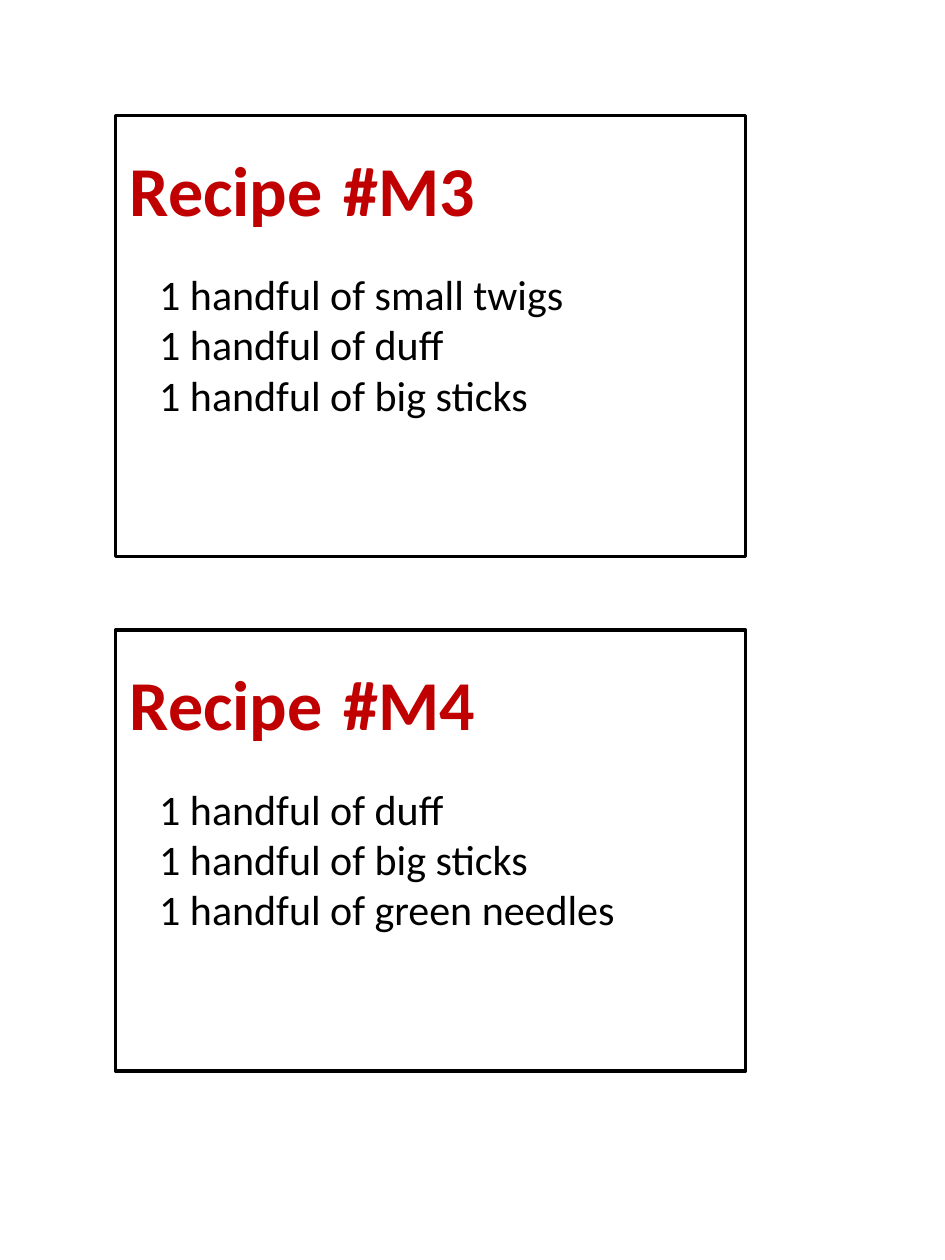
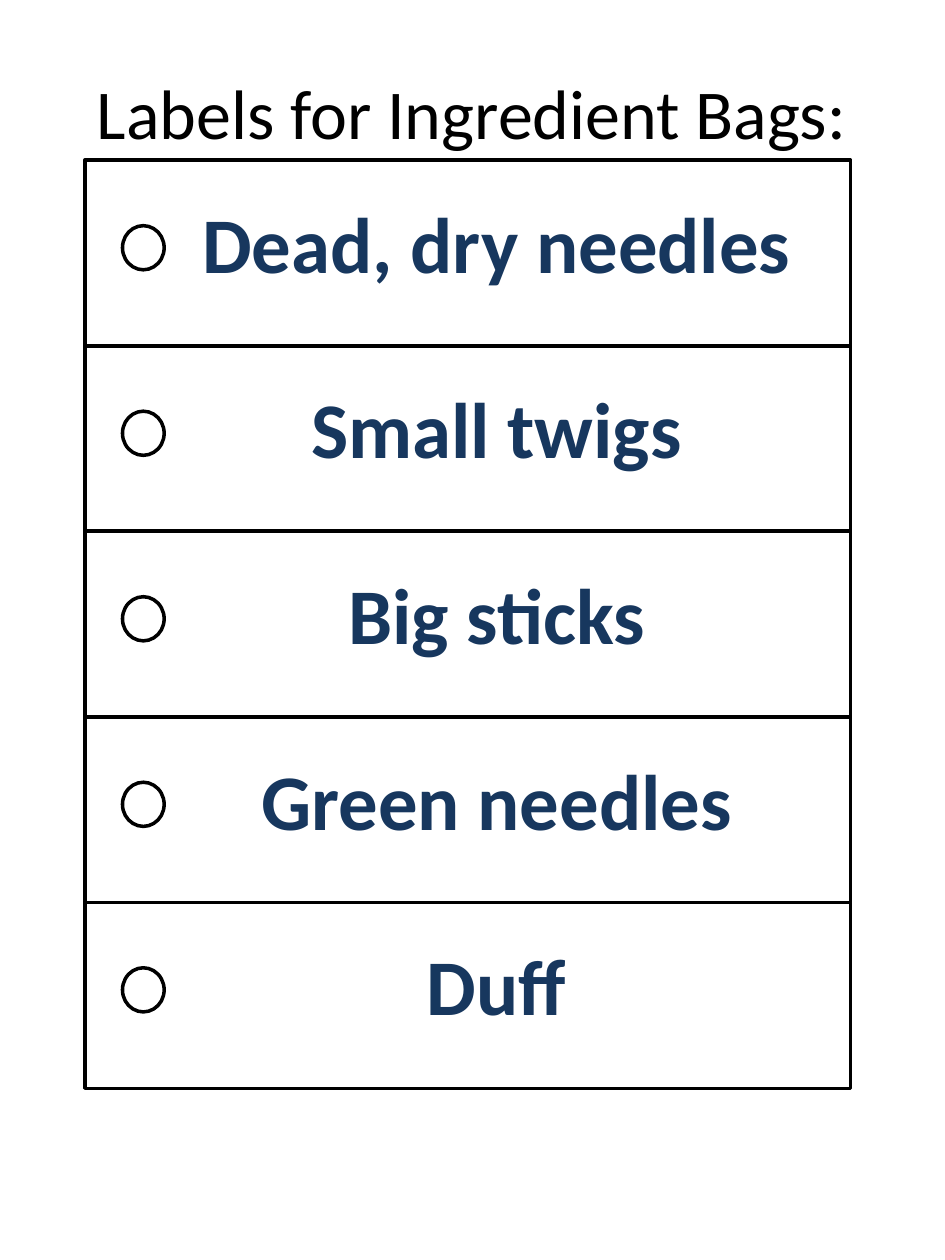
import pptx
import pptx.dml.color
import pptx.enum.shapes
import pptx.enum.text
import pptx.util

Cm = pptx.util.Cm
Pt = pptx.util.Pt
ALIGN = pptx.enum.text.PP_ALIGN
ANCHOR = pptx.enum.text.MSO_ANCHOR
SHAPE = pptx.enum.shapes.MSO_SHAPE

COLOURS = {"ink": "000000", "recipe": "C00000", "label": "17375E"}
TITLE_ONLY, BLANK = 5, 6

RECIPES = [
    ("#M3", ["1 handful of small twigs", "1 handful of duff", "1 handful of big sticks"]),
    ("#M4", ["1 handful of duff", "1 handful of big sticks", "1 handful of green needles"]),
]
BAG_LABELS = ["Dead, dry needles", "Small twigs", "Big sticks", "Green needles", "Duff"]


class CardSheet:
    """Holds the shared style and the slide being filled."""

    styles = {
        "title": {"size": Pt(40), "bold": False, "colour": "ink"},
        "recipe": {"size": Pt(40), "bold": True, "colour": "recipe"},
        "recipe gap": {"size": Pt(54), "bold": True, "colour": "recipe"},
        "ingredient": {"size": Pt(24), "bold": False, "colour": "ink"},
        "label": {"size": Pt(45), "bold": True, "colour": "label"},
    }
    frame_format = {"word_wrap": True, "vertical_anchor": ANCHOR.TOP,
                    "auto_size": pptx.enum.text.MSO_AUTO_SIZE.NONE}

    def __init__(self):
        self.deck = pptx.Presentation()
        self.deck.slide_width, self.deck.slide_height = Cm(19.05), Cm(25.4)
        self.slide = None

    def new_slide(self, layout):
        self.slide = self.deck.slides.add_slide(self.deck.slide_layouts[layout])

    def colour(self, name):
        return pptx.dml.color.RGBColor.from_string(COLOURS[name])

    def fill_frame(self, frame, paragraphs, align=ALIGN.LEFT, **changes):
        """Each paragraph is a list of (words, style name) pairs."""
        for name, value in {**self.frame_format, **changes}.items():
            setattr(frame, name, value)
        for number, runs in enumerate(paragraphs):
            paragraph = frame.add_paragraph() if number else frame.paragraphs[0]
            paragraph.alignment = align
            for words, style in runs:
                run = paragraph.add_run()
                run.text = words
                font_format = {"name": "Calibri", **self.styles[style]}
                run.font.color.rgb = self.colour(font_format.pop("colour"))
                for name, value in font_format.items():
                    setattr(run.font, name, value)

    def title(self, words, left, top, width, height):
        heading = self.slide.shapes.title
        place = {"left": left, "top": top, "width": width, "height": height}
        for name, value in place.items():
            setattr(heading, name, Cm(value))
        self.fill_frame(heading.text_frame, [[(words, "title")]])

    def text(self, paragraphs, left, top, width, height, **options):
        box = self.slide.shapes.add_textbox(Cm(left), Cm(top), Cm(width), Cm(height))
        self.fill_frame(box.text_frame, paragraphs, **options)

    def outline(self, kind, left, top, width, height):
        border = self.slide.shapes.add_shape(kind, Cm(left), Cm(top), Cm(width), Cm(height))
        border.shadow.inherit = False
        border.fill.background()
        border.line.color.rgb = self.colour("ink")
        border.line.width = Pt(2)

    def recipe_card(self, number, ingredients, left, top):
        self.text([[(line, "ingredient")] for line in ingredients],
                  left + 0.63, top + 2.96, 12.07, 3.33)
        self.text([[("Recipe", "recipe"), (" ", "recipe gap"), (number, "recipe")]],
                  left, top, 7.54, 2.57, align=ALIGN.CENTER, word_wrap=False)
        self.outline(SHAPE.RECTANGLE, left, top, 12.7, 8.89)

    def bag_label(self, ingredient, left, top):
        self.text([[(ingredient, "label")]], left + 1.7, top + 0.57, 13.2, 2.18,
                  align=ALIGN.CENTER)
        self.outline(SHAPE.RECTANGLE, left, top, 15.44, 3.75)
        self.outline(SHAPE.OVAL, left + 0.76, top + 1.32, 0.84, 0.89)  # string hole


def main():
    sheet = CardSheet()

    # Recipe cards
    sheet.new_slide(BLANK)
    for row, (number, ingredients) in enumerate(RECIPES):
        sheet.recipe_card(number, ingredients, 2.33, 2.33 + row * 10.37)

    # Bag labels
    sheet.new_slide(TITLE_ONLY)
    sheet.title("Labels for Ingredient Bags:", 1.7, 1.27, 16.3, 1.96)
    for row, ingredient in enumerate(BAG_LABELS):
        sheet.bag_label(ingredient, 1.71, 3.23 + row * 3.74)

    sheet.deck.save("out.pptx")


if __name__ == "__main__":
    main()
